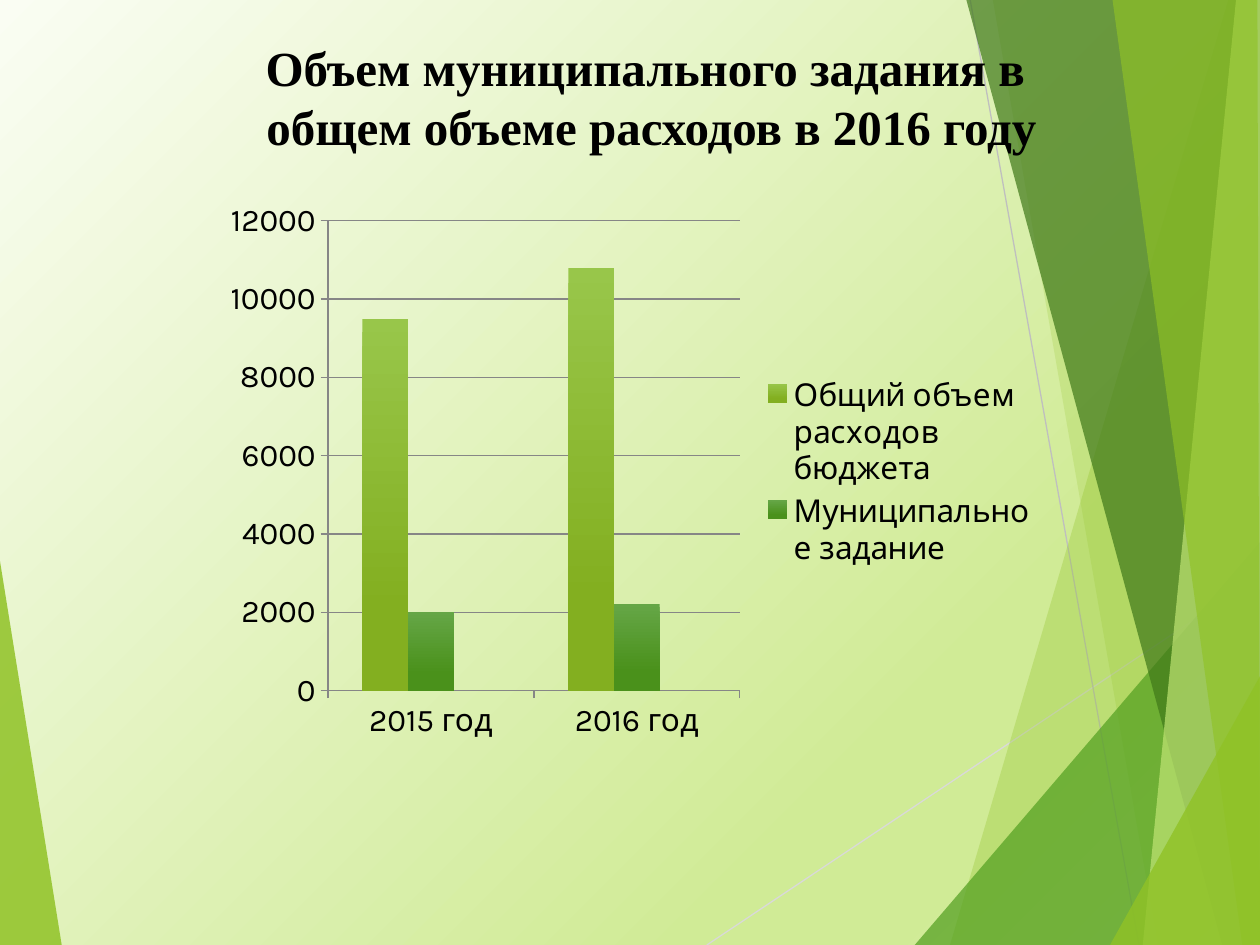
from dataclasses import dataclass

from lxml import etree
from pptx import Presentation
from pptx.chart.data import CategoryChartData
from pptx.dml.color import RGBColor
from pptx.enum.chart import XL_CHART_TYPE, XL_LEGEND_POSITION, XL_TICK_MARK
from pptx.enum.shapes import MSO_CONNECTOR
from pptx.enum.text import MSO_ANCHOR, PP_ALIGN
from pptx.oxml import parse_xml
from pptx.oxml.ns import nsdecls, qn
from pptx.util import Inches, Pt


@dataclass(frozen=True)
class Theme:
    lime: str = "90C226"
    green: str = "54A021"
    forest: str = "3F7819"
    pale: str = "C0E474"
    gold: str = "E6B91E"
    text: str = "000000"
    axis: str = "868686"
    light_line: str = "D9D9D9"
    mid_line: str = "BFBFBF"
    title_font: str = "Times New Roman"
    chart_font: str = "Karla"
    title_size: int = 28
    chart_size: int = 18
    background: tuple = ((0, "FAFDF3"), (74, "D0EB96"), (83, "D0EB96"), (100, "DFF1B9"))
    lime_bar: tuple = ((0, "98C64A"), (78, "83AF20"), (100, "83AF20"))
    green_bar: tuple = ((0, "65A646"), (78, "4A911B"), (100, "4A911B"))


def add_text(p, text, font=None, size=None, color=None, bold=False):
    r = p.add_run()
    r.text = text
    r.font.name = font
    r.font.size = Pt(size)
    r.font.bold = bold
    r.font.color.rgb = RGBColor.from_string(color)


def set_gradient(fill, element, stops, angle):
    """Fill with any number of (percent, colour) stops."""
    fill.gradient()
    fill.gradient_angle = angle
    gs_list = next(element.iter(qn("a:gsLst")))
    for gs in list(gs_list):
        gs_list.remove(gs)
    for percent, color in stops:
        gs = etree.SubElement(gs_list, qn("a:gs"), pos=str(percent * 1000))
        etree.SubElement(gs, qn("a:srgbClr"), val=color)


class SlideBuilder:
    def __init__(self, prs, theme):
        self.theme = theme
        self.s = prs.slides.add_slide(prs.slide_layouts[6])

    def background(self, stops):
        set_gradient(self.s.background.fill, self.s.element, stops, 315)

    def polygon(self, points, color, opacity):
        (x, y), *rest = [(Inches(x), Inches(y)) for x, y in points]
        fb = self.s.shapes.build_freeform(x, y)
        fb.add_line_segments(rest, close=True)
        sp = fb.convert_to_shape()
        sp.shadow.inherit = False
        sp.fill.solid()
        sp.fill.fore_color.rgb = RGBColor.from_string(color)
        sp.line.fill.background()
        clr = next(sp.element.spPr.iter(qn("a:srgbClr")))
        etree.SubElement(clr, qn("a:alpha"), val=str(opacity * 1000))

    def line(self, x1, y1, x2, y2, color):
        cx = self.s.shapes.add_connector(
            MSO_CONNECTOR.STRAIGHT, Inches(x1), Inches(y1), Inches(x2), Inches(y2))
        cx.line.color.rgb = RGBColor.from_string(color)
        cx.line.width = Pt(0.75)
        etree.SubElement(cx.element.spPr, qn("a:effectLst"))

    def title(self, x, y, w, h, lines):
        t = self.theme
        tf = self.s.shapes.add_textbox(Inches(x), Inches(y), Inches(w), Inches(h)).text_frame
        tf.word_wrap = True
        tf.vertical_anchor = MSO_ANCHOR.TOP
        for i, text in enumerate(lines):
            p = tf.add_paragraph() if i else tf.paragraphs[0]
            p.alignment = PP_ALIGN.CENTER
            add_text(p, text, font=t.title_font, size=t.title_size, color=t.text, bold=True)

    def column_chart(self, x, y, w, h, cats, series, layout):
        """series: (name, values, gradient stops or plain colour)."""
        t = self.theme
        data = CategoryChartData()
        data.categories = cats
        for name, values, _ in series:
            data.add_series(name, values)
        chart = self.s.shapes.add_chart(
            XL_CHART_TYPE.COLUMN_CLUSTERED, Inches(x), Inches(y), Inches(w), Inches(h), data).chart
        chart.has_title = False
        chart.font.name = t.chart_font
        chart.font.size = Pt(t.chart_size)
        chart.font.color.rgb = RGBColor.from_string(t.text)

        # Columns
        plot = chart.plots[0]
        plot.vary_by_categories = False
        plot.gap_width = 150
        plot.overlap = 0
        for ser, (_, _, paint) in zip(plot.series, series):
            fill = ser.format.fill
            if isinstance(paint, str):
                fill.solid()
                fill.fore_color.rgb = RGBColor.from_string(paint)
            else:
                set_gradient(fill, ser._element, paint, 270)

        # Axes and gridlines
        value = chart.value_axis
        value.minimum_scale, value.maximum_scale, value.major_unit = 0, 12000, 2000
        value.has_major_gridlines = True
        for axis in (chart.category_axis, value):
            axis.major_tick_mark = XL_TICK_MARK.OUTSIDE
        for part in (chart.category_axis, value, value.major_gridlines):
            part.format.line.color.rgb = RGBColor.from_string(t.axis)
            part.format.line.width = Pt(0.75)

        # Legend without the series that has no values
        chart.has_legend = True
        legend = chart.legend
        legend.position = XL_LEGEND_POSITION.RIGHT
        legend.include_in_layout = False
        for i, (_, values, _) in enumerate(series):
            if not any(values):
                legend._element.find(qn("c:legendPos")).addnext(parse_xml(
                    f'<c:legendEntry {nsdecls("c")}><c:idx val="{i}"/>'
                    '<c:delete val="1"/></c:legendEntry>'))

        # Inner plot area as fractions of the chart
        area = next(chart.element.iter(qn("c:plotArea")))
        for old in area.findall(qn("c:layout")):
            area.remove(old)
        sizes = "".join(f'<c:{k} val="{v}"/>' for k, v in zip("xywh", layout))
        area.insert(0, parse_xml(
            f'<c:layout {nsdecls("c")}><c:manualLayout><c:layoutTarget val="inner"/>'
            f'<c:xMode val="edge"/><c:yMode val="edge"/>{sizes}</c:manualLayout></c:layout>'))


def main():
    prs = Presentation()
    prs.slide_width, prs.slide_height = Inches(10), Inches(7.5)
    t = Theme()
    b = SlideBuilder(prs, t)
    b.background(t.background)

    # Facets: left wedge, two thin lines, overlapping right-hand shards
    b.polygon([(-0.01, 4.39), (0.49, 7.5), (-0.01, 7.5)], t.lime, 85)
    b.line(5.61, 7.5, 10, 4.57, t.light_line)
    b.line(7.7, 0, 9.04, 7.5, t.mid_line)
    right, bottom = 10.01, 7.5
    shards = [
        ([(9.75, 0), (7.54, bottom), (right, bottom), (right, 0)], t.lime, 30),
        ([(7.88, 0), (9.19, bottom), (right, bottom), (right, 0)], t.lime, 20),
        ([(7.26, bottom), (right, 4.29), (right, bottom)], t.green, 72),
        ([(7.67, 0), (9.7, bottom), (right, bottom), (right, 0)], t.forest, 70),
        ([(9.81, 0), (9.07, bottom), (right, bottom), (right, 0)], t.pale, 70),
        ([(8.83, 0), (9.86, bottom), (10, bottom), (9.98, 0)], t.lime, 65),
        ([(8.81, bottom), (right, 5.35), (right, bottom)], t.lime, 80),
    ]
    for points, color, opacity in shards:
        b.polygon(points, color, opacity)

    # Title
    b.title(0.67, 0.25, 9, 1.25,
            ["Объем муниципального задания в ", "общем объеме расходов в 2016 году"])

    # Chart
    b.column_chart(
        1.67, 1.53, 6.67, 4.44, ["2015 год", "2016 год"],
        [("Общий объем расходов бюджета", (9500, 10800), t.lime_bar),
         ("Муниципальное задание", (2000, 2200), t.green_bar),
         ("Series 3", (None, None), t.gold)],
        layout=(0.14, 0.05, 0.49, 0.84))

    prs.save("out.pptx")


if __name__ == "__main__":
    main()
